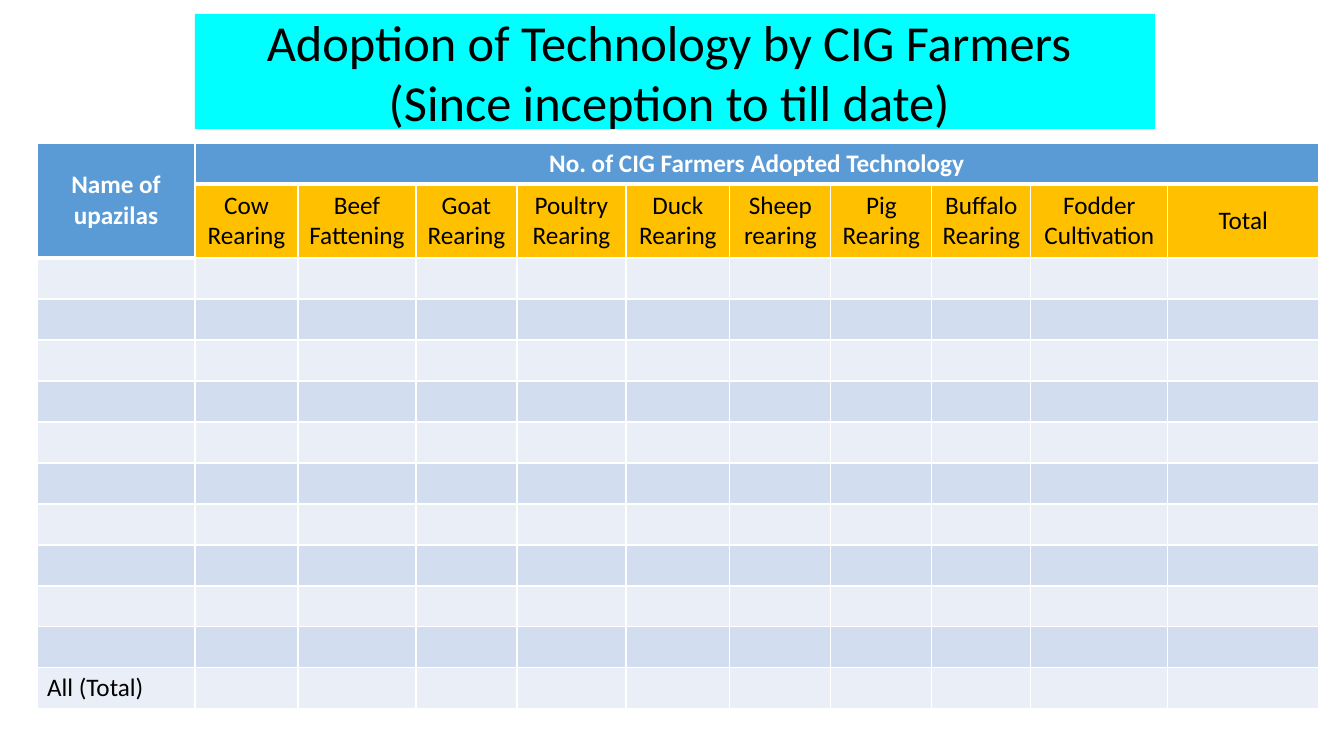
from lxml.etree import SubElement
from pptx import Presentation
from pptx.dml.color import RGBColor
from pptx.enum.shapes import MSO_SHAPE
from pptx.enum.text import MSO_ANCHOR, PP_ALIGN
from pptx.oxml.ns import qn
from pptx.util import Emu, Pt

EMU_PER_PX = 914400 / 100.8
COLORS = {
    "title": "00FFFF",
    "header": "5B9BD5",
    "subheader": "FFC000",
    "light_band": "EAEFF7",
    "dark_band": "D2DEEF",
    "white": "FFFFFF",
    "black": "000000",
}
TITLE_LINES = ["Adoption of Technology by CIG Farmers ", "(Since inception to till date) "]
TECHNOLOGIES = [
    "Cow Rearing", "Beef Fattening", "Goat Rearing", "Poultry Rearing", "Duck Rearing",
    "Sheep rearing", "Pig Rearing", "Buffalo Rearing", "Fodder Cultivation", "Total",
]
COLUMN_WIDTHS = [158, 103, 118, 101, 109, 104, 101, 101, 99, 137, 151]
ROW_HEIGHTS = [41, 74] + [41] * 11
THIN, HEAVY = 1, 3


def px(length):
    return Emu(round(length * EMU_PER_PX))


def color(name):
    return RGBColor.from_string(COLORS[name])


def paint(fill, name):
    fill.solid()
    fill.fore_color.rgb = color(name)


def write_paragraph(paragraph, text, size, text_color="black", bold=False, align=PP_ALIGN.CENTER):
    paragraph.alignment = align
    run = paragraph.add_run()
    run.text = text
    font_values = {"name": "Calibri", "size": Pt(size), "bold": bold}
    for attribute, value in font_values.items():
        setattr(run.font, attribute, value)
    run.font.color.rgb = color(text_color)


def add_title(slide):
    shape = slide.shapes.add_shape(MSO_SHAPE.RECTANGLE, px(195), px(14), px(960), px(115))
    shape.shadow.inherit = False
    shape.line.fill.background()
    paint(shape.fill, "title")
    frame = shape.text_frame
    frame_values = {"word_wrap": True, "vertical_anchor": MSO_ANCHOR.MIDDLE}
    for attribute, value in frame_values.items():
        setattr(frame, attribute, value)
    for index, line in enumerate(TITLE_LINES):
        paragraph = frame.add_paragraph() if index else frame.paragraphs[0]
        write_paragraph(paragraph, line, 36)


def set_borders(cell, top, bottom):
    properties = cell._tc.get_or_add_tcPr()
    widths = {"a:lnL": THIN, "a:lnR": THIN, "a:lnT": top, "a:lnB": bottom}
    for tag, width in widths.items():
        line = SubElement(properties, qn(tag), w=str(Pt(width)))
        fill = SubElement(line, qn("a:solidFill"))
        SubElement(fill, qn("a:srgbClr"), val=COLORS["white"])


def cell_color(row, column):
    if row == 0 or (row == 1 and column == 0):
        return "header"
    if row == 1:
        return "subheader"
    return "dark_band" if row % 2 else "light_band"


def format_cell(cell, row, column):
    # The heavy rule lies under the blue header cells
    heavy_row = 1 if column == 0 else 0
    set_borders(
        cell,
        top=HEAVY if row == heavy_row + 1 else THIN,
        bottom=HEAVY if row == heavy_row else THIN,
    )
    paint(cell.fill, cell_color(row, column))


def write_cell(cell, text, anchor=MSO_ANCHOR.MIDDLE, **text_format):
    cell.vertical_anchor = anchor
    write_paragraph(cell.text_frame.paragraphs[0], text, 18, **text_format)


def add_adoption_table(slide):
    table = slide.shapes.add_table(
        len(ROW_HEIGHTS), len(COLUMN_WIDTHS),
        px(37), px(143), px(sum(COLUMN_WIDTHS)), px(sum(ROW_HEIGHTS)),
    ).table
    for column, width in zip(table.columns, COLUMN_WIDTHS):
        column.width = px(width)
    for row, height in zip(table.rows, ROW_HEIGHTS):
        row.height = px(height)

    # Fills and borders
    for row_index, row in enumerate(table.rows):
        for column_index, cell in enumerate(row.cells):
            format_cell(cell, row_index, column_index)

    # Headers
    table.cell(0, 0).merge(table.cell(1, 0))
    table.cell(0, 1).merge(table.cell(0, len(TECHNOLOGIES)))
    header_format = {"text_color": "white", "bold": True}
    write_cell(table.cell(0, 0), "Name of upazilas", **header_format)
    write_cell(table.cell(0, 1), "No. of CIG Farmers Adopted Technology",
               anchor=MSO_ANCHOR.TOP, **header_format)
    for column, technology in enumerate(TECHNOLOGIES, start=1):
        write_cell(table.cell(1, column), technology)

    # Total row
    write_cell(table.cell(len(ROW_HEIGHTS) - 1, 0), "All (Total)",
               anchor=MSO_ANCHOR.TOP, align=PP_ALIGN.LEFT)


def main():
    presentation = Presentation()
    presentation.slide_width = px(1344)
    presentation.slide_height = px(756)
    slide = presentation.slides.add_slide(presentation.slide_layouts[6])
    add_title(slide)
    add_adoption_table(slide)
    presentation.save("out.pptx")


if __name__ == "__main__":
    main()
